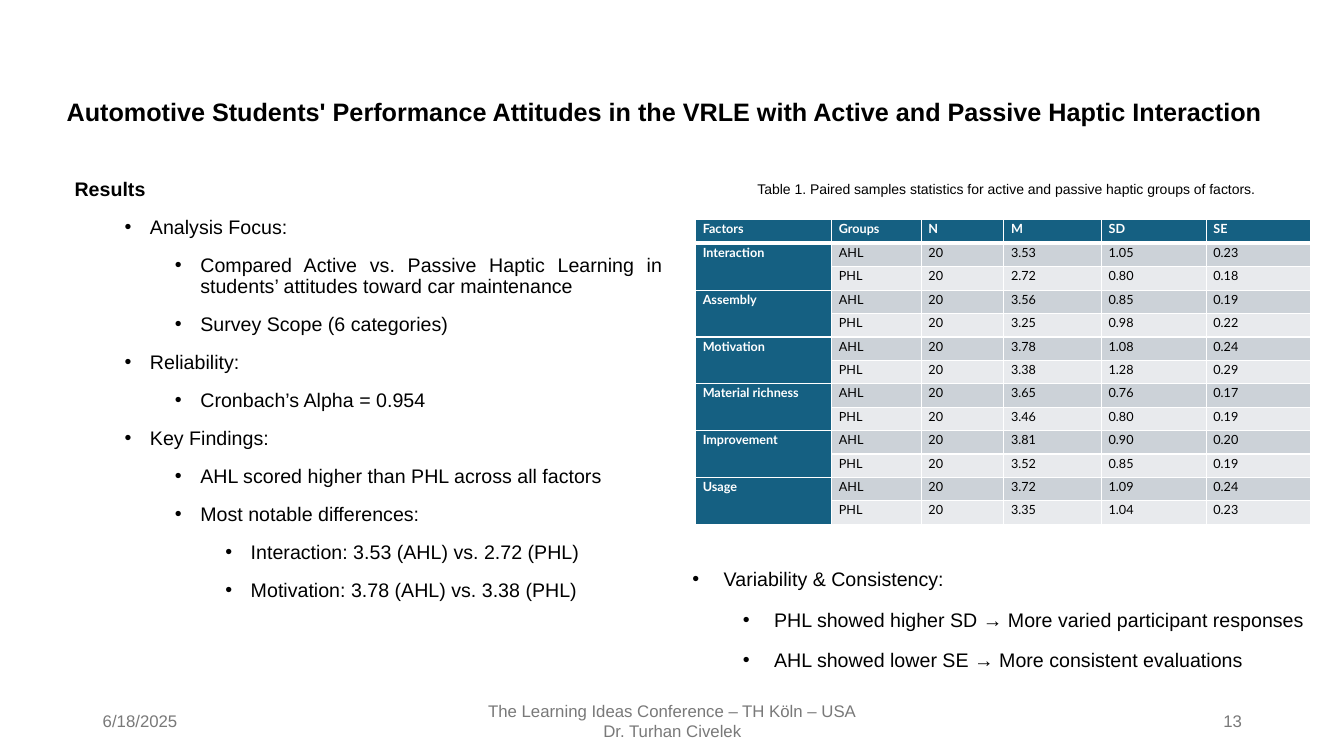
import dataclasses
import typing

import lxml.etree
import pptx
import pptx.dml.color
import pptx.enum.text
import pptx.oxml.ns
import pptx.util

Cm = pptx.util.Cm
Pt = pptx.util.Pt
Align = pptx.enum.text.PP_ALIGN
Anchor = pptx.enum.text.MSO_ANCHOR
qn = pptx.oxml.ns.qn

COLORS = {
    "text": "000000",
    "footer": "797979",
    "heading": "156082",
    "white": "FFFFFF",
    "AHL": "CCD2D8",
    "PHL": "E8EAED",
}


@dataclasses.dataclass
class Line:
    text: str
    level: int = 0
    bold: bool = False


@dataclasses.dataclass
class Box:
    left: float
    top: float
    width: float
    height: float
    lines: list[Line]
    style: dict[str, typing.Any]


@dataclasses.dataclass
class Factor:
    name: str
    active: tuple[str, str, str]
    passive: tuple[str, str, str]


FOOTER = {"size": 12, "color": "footer", "anchor": Anchor.MIDDLE}
BULLETS = {"size": 14, "align": Align.JUSTIFY, "space": 6}

BOXES = [
    Box(1.24, 1.02, 31.01, 3.68, [
        Line("Automotive Students' Performance Attitudes in the VRLE "
             "with Active and Passive Haptic Interaction", bold=True),
    ], {"size": 18, "align": Align.CENTER, "anchor": Anchor.MIDDLE, "spacing": 0.9}),
    Box(1.63, 4.39, 15.32, 11.35, [
        Line("Results", bold=True),
        Line("Analysis Focus:", 1),
        Line("Compared Active vs. Passive Haptic Learning in "
             "students’ attitudes toward car maintenance", 2),
        Line("Survey Scope (6 categories)", 2),
        Line("Reliability:", 1),
        Line("Cronbach’s Alpha = 0.954", 2),
        Line("Key Findings:", 1),
        Line("AHL scored higher than PHL across all factors", 2),
        Line("Most notable differences:", 2),
        Line("Interaction: 3.53 (AHL) vs. 2.72 (PHL)", 3),
        Line("Motivation: 3.78 (AHL) vs. 3.38 (PHL)", 3),
    ], BULLETS | {"spacing": 0.9, "first_indent": 1.9, "hanging": 0.64}),
    Box(2.34, 17.65, 7.62, 1.02, [Line("6/18/2025")], FOOTER),
    Box(11.23, 17.65, 11.43, 1.02, [
        Line("The Learning Ideas Conference – TH Köln – USA"),
        Line("Dr. Turhan Civelek"),
    ], FOOTER | {"align": Align.CENTER}),
    Box(23.93, 17.65, 7.62, 1.02, [Line("13")], FOOTER | {"align": Align.RIGHT}),
    Box(18.47, 4.42, 13.77, 0.69, [
        Line("Table 1. Paired samples statistics for active and passive "
             "haptic groups of factors."),
    ], {"size": 10, "align": Align.CENTER}),
    Box(15.93, 14.17, 17.45, 2.9, [
        Line("Variability & Consistency:", 1),
        Line("PHL showed higher SD → More varied participant responses", 2),
        Line("AHL showed lower SE → More consistent evaluations", 2),
    ], BULLETS | {"first_indent": 2.06, "hanging": 0.79}),
]

HEADINGS = ["Factors", "Groups", "N", "M", "SD", "SE"]
COLUMN_WIDTHS = [3.43, 2.26, 2.08, 2.46, 2.64, 2.64]
ROW_HEIGHT = 0.59
PARTICIPANTS = "20"
FACTORS = [
    Factor("Interaction", ("3.53", "1.05", "0.23"), ("2.72", "0.80", "0.18")),
    Factor("Assembly", ("3.56", "0.85", "0.19"), ("3.25", "0.98", "0.22")),
    Factor("Motivation", ("3.78", "1.08", "0.24"), ("3.38", "1.28", "0.29")),
    Factor("Material richness", ("3.65", "0.76", "0.17"), ("3.46", "0.80", "0.19")),
    Factor("Improvement", ("3.81", "0.90", "0.20"), ("3.52", "0.85", "0.19")),
    Factor("Usage", ("3.72", "1.09", "0.24"), ("3.35", "1.04", "0.23")),
]


def rgb(name: str) -> pptx.dml.color.RGBColor:
    return pptx.dml.color.RGBColor.from_string(COLORS[name])


def write(frame, lines: list[Line], *, size: float, color: str = "text",
          font: str = "Arial", align=Align.LEFT, anchor=Anchor.TOP,
          spacing=None, space: float = 0, first_indent: float = 0,
          hanging: float = 0) -> None:
    frame.word_wrap = True
    frame.vertical_anchor = anchor
    for index, line in enumerate(lines):
        paragraph = frame.add_paragraph() if index else frame.paragraphs[0]
        paragraph.alignment = align
        paragraph.line_spacing = spacing
        paragraph.space_before = paragraph.space_after = Pt(space)
        paragraph.level = line.level
        if line.level:
            properties = paragraph._p.get_or_add_pPr()
            indent = first_indent + 1.27 * (line.level - 1)
            properties.set("marL", str(Cm(indent)))
            properties.set("indent", str(-Cm(hanging)))
            lxml.etree.SubElement(properties, qn("a:buFont"), typeface="Arial")
            lxml.etree.SubElement(properties, qn("a:buChar"), char="•")
        run = paragraph.add_run()
        run.text = line.text
        run.font.name = font
        run.font.size = Pt(size)
        run.font.bold = line.bold
        run.font.color.rgb = rgb(color)


def draw_box(slide, box: Box) -> None:
    area = slide.shapes.add_textbox(
        Cm(box.left), Cm(box.top), Cm(box.width), Cm(box.height))
    write(area.text_frame, box.lines, **box.style)


def draw_borders(cell, top: float, bottom: float) -> None:
    properties = cell._tc.get_or_add_tcPr()
    for side, width in {"L": 1, "R": 1, "T": top, "B": bottom}.items():
        border = lxml.etree.SubElement(
            properties, qn(f"a:ln{side}"), w=str(Pt(width)))
        fill = lxml.etree.SubElement(border, qn("a:solidFill"))
        lxml.etree.SubElement(fill, qn("a:srgbClr"), val=COLORS["white"])


def draw_statistics(slide, left: float, top: float) -> None:
    rows = [HEADINGS]
    for factor in FACTORS:
        rows.append([factor.name, "AHL", PARTICIPANTS, *factor.active])
        rows.append(["", "PHL", PARTICIPANTS, *factor.passive])
    statistics = slide.shapes.add_table(
        len(rows), len(HEADINGS), Cm(left), Cm(top),
        Cm(sum(COLUMN_WIDTHS)), Cm(ROW_HEIGHT * len(rows))).table
    statistics.first_row = statistics.horz_banding = False
    for column, width in zip(statistics.columns, COLUMN_WIDTHS):
        column.width = Cm(width)
    for r, values in enumerate(rows):
        statistics.rows[r].height = Cm(ROW_HEIGHT)
        for c, value in enumerate(values):
            cell = statistics.cell(r, c)
            heading = r == 0 or c == 0
            draw_borders(cell, 3 if r == 1 else 1, 3 if r == 0 else 1)
            cell.fill.solid()
            cell.fill.fore_color.rgb = rgb("heading" if heading else values[1])
            cell.margin_left = cell.margin_right = Cm(0.18)
            cell.margin_top = cell.margin_bottom = 0
            if value:
                write(cell.text_frame, [Line(value, bold=heading)], size=9,
                      color="white" if heading else "text", font="Lato",
                      align=Align.JUSTIFY, spacing=Pt(12))
    for r in range(1, len(rows), 2):
        statistics.cell(r, 0).merge(statistics.cell(r + 1, 0))


def main() -> None:
    presentation = pptx.Presentation()
    presentation.slide_width = Cm(33.87)
    presentation.slide_height = Cm(19.05)
    slide = presentation.slides.add_slide(presentation.slide_layouts[6])
    for box in BOXES:
        draw_box(slide, box)
    draw_statistics(slide, 17.53, 5.54)
    presentation.save("out.pptx")


if __name__ == "__main__":
    main()
